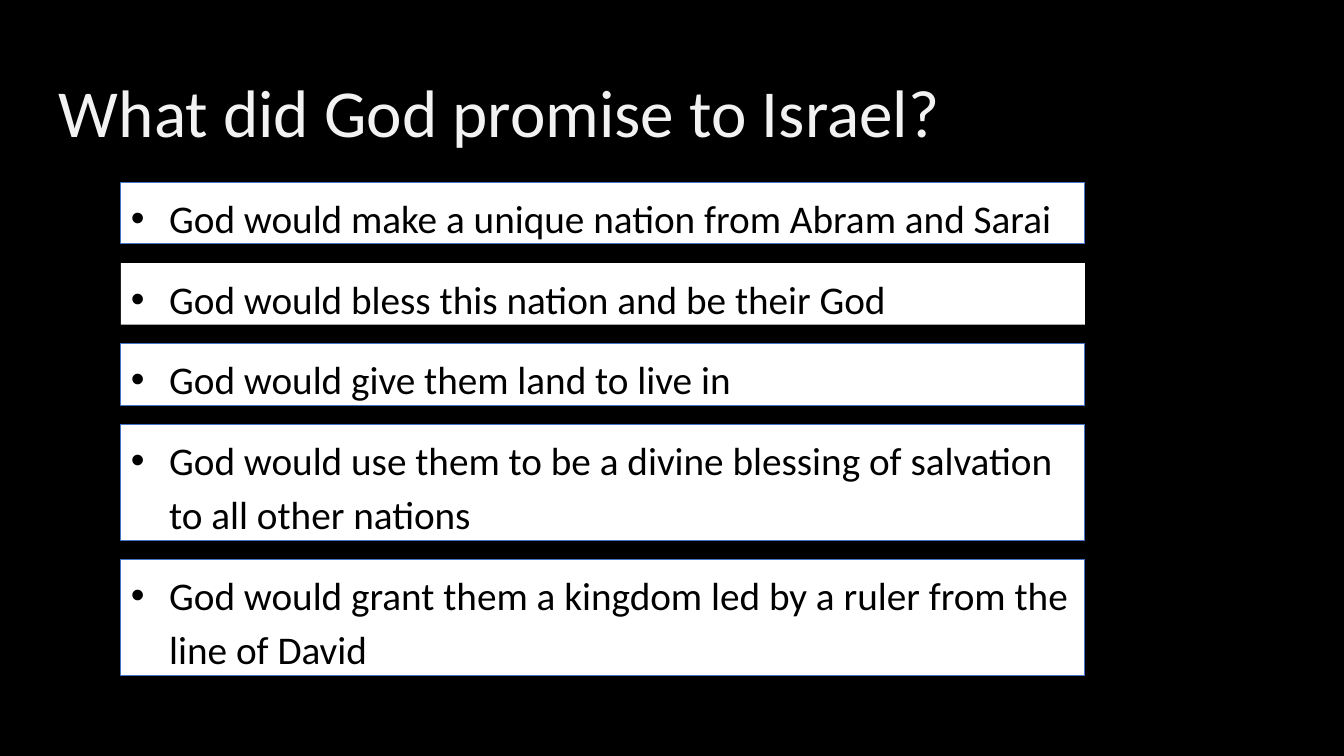
import pptx
import pptx.util
import pptx.dml.color
import pptx.enum.shapes
import pptx.enum.text
import pptx.oxml.ns
import lxml.etree

Inches = pptx.util.Inches
Pt = pptx.util.Pt
RGBColor = pptx.dml.color.RGBColor
ALIGN = pptx.enum.text.PP_ALIGN
RECTANGLE = pptx.enum.shapes.MSO_SHAPE.RECTANGLE

BLACK = RGBColor(0x00, 0x00, 0x00)
WHITE = RGBColor(0xFF, 0xFF, 0xFF)
PALE = RGBColor(0xF2, 0xF2, 0xF2)
BLUE = RGBColor(0x44, 0x72, 0xC4)

LEFT, TOP, WIDTH, GAP = 1.2, 1.81, 9.56, 0.19
ONE_LINE, TWO_LINES = 0.61, 1.15

promises = [
    ("God would make a unique nation from Abram and Sarai", ONE_LINE, True),
    ("God would bless this nation and be their God", ONE_LINE, False),
    ("God would give them land to live in", ONE_LINE, True),
    ("God would use them to be a divine blessing of salvation to all other nations", TWO_LINES, True),
    ("God would grant them a kingdom led by a ruler from the line of David", TWO_LINES, True),
]


def add_panel(left, top, width, height, fill, outline, weight):
    panel = slide.shapes.add_shape(
        RECTANGLE, Inches(left), Inches(top), Inches(width), Inches(height))
    panel.shadow.inherit = False
    panel.fill.solid()
    panel.fill.fore_color.rgb = fill
    if outline is None:
        panel.line.fill.background()
    else:
        panel.line.color.rgb = outline
        panel.line.width = Pt(weight)
    return panel


def write(frame, words, size, color, align):
    frame.word_wrap = True
    frame.vertical_anchor = pptx.enum.text.MSO_ANCHOR.TOP
    frame.text = words
    paragraph = frame.paragraphs[0]
    paragraph.alignment = align
    paragraph.line_spacing = 1.15
    paragraph.space_before = Pt(12)
    paragraph.space_after = Pt(8)
    font = paragraph.runs[0].font
    font.name = "Calibri"
    font.size = Pt(size)
    font.color.rgb = color
    return paragraph


deck = pptx.Presentation()
deck.slide_width = Inches(13.33)
deck.slide_height = Inches(7.5)
slide = deck.slides.add_slide(deck.slide_layouts[6])

add_panel(0, 0, 13.33, 7.5, BLACK, BLACK, 1)

question = slide.shapes.add_textbox(Inches(0.1), Inches(0.53), Inches(9.71), Inches(0.98))
write(question.text_frame, "What did God promise to Israel?", 48, PALE, ALIGN.CENTER)

top = TOP
for words, height, outlined in promises:
    promise = add_panel(LEFT, top, WIDTH, height, WHITE, BLUE if outlined else None, 0.75)
    paragraph = write(promise.text_frame, words, 28, BLACK, ALIGN.LEFT)
    settings = paragraph._p.get_or_add_pPr()
    settings.set("marL", str(Inches(0.38)))
    settings.set("indent", str(-Inches(0.38)))
    bullet_font = lxml.etree.SubElement(settings, pptx.oxml.ns.qn("a:buFont"))
    bullet_font.set("typeface", "Arial")
    bullet = lxml.etree.SubElement(settings, pptx.oxml.ns.qn("a:buChar"))
    bullet.set("char", "•")
    top += height + GAP

deck.save("out.pptx")
